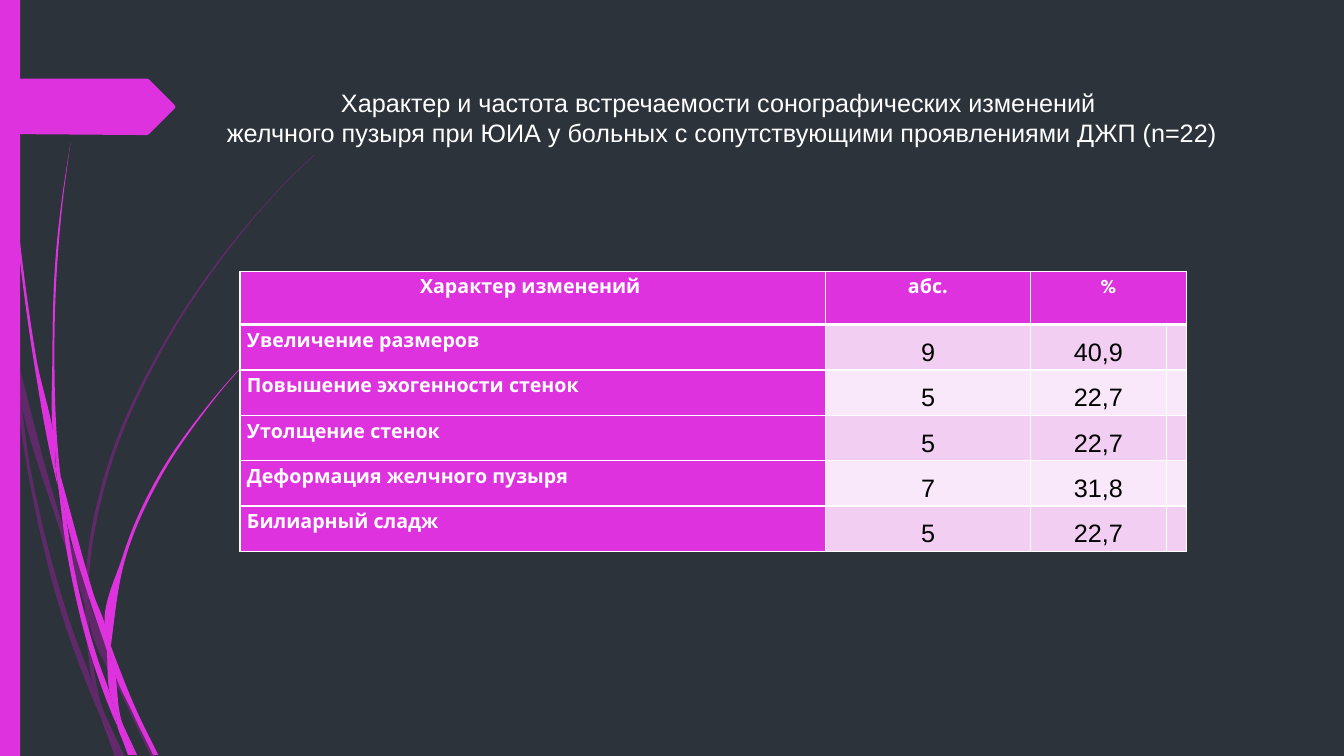
import math

from lxml import etree
from pptx import Presentation
from pptx import util as u
from pptx.dml import color
from pptx.enum import shapes, text
from pptx.oxml import ns

PX = u.Inches(1) / 100
MAGENTA, PURPLE, DARK, WHITE, BLACK = "DE32DE", "B01CB0", "2C333A", "FFFFFF", "000000"
BANDS = ("F2CEF2", "F9E8F9")

PURPLE_STRANDS = [
    [(11, 350), (9, 322), (0, 282), (0, 299), (10, 344)],
    [(58, 522), (84, 599), (85, 586), (62, 520), (14, 345), (17, 376)],
    [(92, 607), (88, 596), (88, 610), (123, 694), (150, 751), (155, 751), (127, 692)],
    [(119, 751), (124, 751), (105, 711)],
    [(93, 683), (70, 619), (31, 469), (17, 376), (11, 350), (28, 470), (65, 621), (92, 693),
     (101, 714), (99, 707)],
    [(84, 599), (87, 646), (93, 683), (96, 692), (105, 711), (103, 706), (91, 646), (88, 610),
     (88, 608)],
    [(88, 584), (110, 462), (160, 349), (229, 245), (268, 198), (290, 175), (312, 154),
     (312, 153), (289, 175), (268, 197), (228, 244), (158, 348), (107, 461), (85, 584),
     (85, 586), (88, 596)],
    [(101, 714), (114, 751), (119, 751)],
    [(88, 608), (88, 610), (88, 596), (85, 586), (84, 599)],
    [(96, 692), (93, 683), (99, 707), (101, 714), (119, 751), (105, 711)],
]
MAGENTA_STRANDS = [
    [(7, 110), (17, 233), (33, 355), (56, 477), (57, 481), (55, 457), (55, 453), (36, 355),
     (19, 232), (8, 109), (5, 48), (4, 0), (3, 0), (4, 48)],
    [(88, 592), (106, 645), (106, 633), (106, 631), (93, 590), (60, 472), (64, 505)],
    [(113, 649), (110, 641), (111, 656), (132, 708), (152, 749), (157, 749), (136, 706)],
    [(110, 691), (98, 657), (72, 556), (64, 505), (57, 477), (68, 557), (93, 659), (111, 708),
     (117, 722), (116, 717)],
    [(60, 472), (58, 453), (54, 349), (58, 245), (63, 193), (70, 141), (62, 193), (56, 245),
     (52, 349), (55, 449)],
    [(133, 749), (136, 749), (122, 719)],
    [(57, 477), (64, 505), (60, 472), (55, 449), (55, 453)],
    [(111, 633), (125, 552), (158, 476), (205, 406), (231, 374), (245, 359), (261, 344),
     (260, 344), (245, 358), (231, 373), (204, 405), (156, 474), (122, 551), (106, 631),
     (110, 641)],
    [(117, 722), (127, 749), (131, 749)],
    [(106, 645), (110, 691), (116, 706), (122, 719), (121, 716), (111, 656), (109, 651)],
    [(106, 645), (109, 651), (111, 656), (110, 641), (106, 631), (106, 633)],
    [(116, 706), (110, 691), (116, 717), (117, 722), (130, 749), (133, 749), (122, 719)],
]
BANNER = [(173, 108), (148, 133), (146, 134), (136, 134), (0, 133), (0, 78), (136, 78),
          (146, 78), (148, 79), (173, 104), (174, 106)]

TITLE = [
    "Характер и частота встречаемости сонографических изменений ",
    "желчного пузыря при ЮИА у больных с сопутствующими проявлениями ДЖП (n=22)",
]
HEADER = ["Характер изменений ", "абс.", "%", ""]
FINDINGS = [
    ["Увеличение размеров", "9", "40,9", ""],
    ["Повышение эхогенности стенок", "5", "22,7", ""],
    ["Утолщение стенок", "5", "22,7", ""],
    ["Деформация желчного пузыря", "7", "31,8", ""],
    ["Билиарный сладж", "5", "22,7", ""],
]


def px(value):
    return u.Emu(round(value * PX))


def rgb(value):
    return color.RGBColor.from_string(value)


def tangent(before, point, after, fallback):
    length_in, length_out = math.dist(before, point), math.dist(point, after)
    arrive = [(p - b) / length_in for b, p in zip(before, point)]
    leave = [(a - p) / length_out for p, a in zip(point, after)]
    if sum(a * b for a, b in zip(arrive, leave)) < 0.8:
        start, end = fallback
        return [(e - s) / math.dist(start, end) for s, e in zip(start, end)]
    mixed = [a / length_in + b / length_out for a, b in zip(arrive, leave)]
    return [m / math.hypot(*mixed) for m in mixed]


def smooth(shape):
    lines = list(shape._element.iter(ns.qn("a:lnTo")))
    points = [(int(line[0].get("x")), int(line[0].get("y"))) for line in lines]
    for i, line in enumerate(lines):
        before, start, end = points[i - 2], points[i - 1], points[i]
        after = points[(i + 1) % len(points)]
        reach = math.dist(start, end) / 3
        leave = tangent(before, start, end, (start, end))
        arrive = tangent(start, end, after, (start, end))
        handles = ([s + reach * d for s, d in zip(start, leave)],
                   [e - reach * d for e, d in zip(end, arrive)])
        line.tag = ns.qn("a:cubicBezTo")
        for position, (x, y) in enumerate(handles):
            line.insert(position, etree.Element(ns.qn("a:pt"), x=str(round(x)), y=str(round(y))))


class SlideBuilder:
    def __init__(self, slide):
        self.slide = slide
        self.body_font = "Arial"
        self.label_font = "League Spartan"

    def background(self, fill):
        self.slide.background.fill.solid()
        self.slide.background.fill.fore_color.rgb = rgb(fill)

    def paint(self, shape, fill, opacity=100):
        shape.shadow.inherit = False
        shape.line.fill.background()
        shape.fill.solid()
        shape.fill.fore_color.rgb = rgb(fill)
        if opacity < 100:
            tone = shape.fill._xPr.find(".//" + ns.qn("a:srgbClr"))
            etree.SubElement(tone, ns.qn("a:alpha")).set("val", str(opacity * 1000))

    def rectangle(self, left, top, width, height, fill):
        shape = self.slide.shapes.add_shape(
            shapes.MSO_SHAPE.RECTANGLE, px(left), px(top), px(width), px(height))
        self.paint(shape, fill)

    def outline(self, points, fill, opacity=100):
        corners = [(px(x), px(y)) for x, y in points]
        builder = self.slide.shapes.build_freeform(*corners[0], scale=1.0)
        builder.add_line_segments(corners[1:] + corners[:1], close=True)
        shape = builder.convert_to_shape()
        self.paint(shape, fill, opacity)
        return shape

    def format_paragraph(self, paragraph, font, size, fill, bold=False, centred=True):
        paragraph.alignment = text.PP_ALIGN.CENTER if centred else text.PP_ALIGN.LEFT
        for run in paragraph.runs:
            run.font.name = font
            run.font.size = u.Pt(size)
            run.font.bold = bold
            run.font.color.rgb = rgb(fill)

    def title(self, left, top, width, height, lines):
        box = self.slide.shapes.add_textbox(px(left), px(top), px(width), px(height))
        frame = box.text_frame
        frame.word_wrap = False
        frame.auto_size = text.MSO_AUTO_SIZE.SHAPE_TO_FIT_TEXT
        frame.vertical_anchor = text.MSO_ANCHOR.MIDDLE
        frame.text = "\n".join(lines)
        for paragraph in frame.paragraphs:
            self.format_paragraph(paragraph, self.body_font, 18, WHITE)

    def borders(self, cell, top, bottom):
        properties = cell._tc.get_or_add_tcPr()
        for side, width in (("L", 1), ("R", 1), ("T", top), ("B", bottom)):
            line = etree.SubElement(properties, ns.qn("a:ln" + side), w=str(u.Pt(width)))
            fill = etree.SubElement(line, ns.qn("a:solidFill"))
            etree.SubElement(fill, ns.qn("a:srgbClr"), val=WHITE)

    def cell(self, cell, value, row, column):
        header, label = row == 0, row == 0 or column == 0
        self.borders(cell, 3 if row == 1 else 1, 3 if header else 1)
        cell.fill.solid()
        cell.fill.fore_color.rgb = rgb(MAGENTA if label else BANDS[(row - 1) % 2])
        cell.margin_left = cell.margin_right = px(7)
        cell.margin_top = cell.margin_bottom = 0
        if not value:
            return
        cell.text_frame.text = value
        paragraph = cell.text_frame.paragraphs[0]
        paragraph.line_spacing = 1.5
        if header and column:
            paragraph.space_after = u.Pt(10)
        font = (self.label_font, 14, WHITE, True) if label else (self.body_font, 18, BLACK)
        self.format_paragraph(paragraph, *font, centred=header or column > 0)

    def table(self, left, top, widths, heights, rows):
        table = self.slide.shapes.add_table(
            len(heights), len(widths), px(left), px(top), px(sum(widths)), px(sum(heights))).table
        for column, width in zip(table.columns, widths):
            column.width = px(width)
        for i, (height, values) in enumerate(zip(heights, rows)):
            table.rows[i].height = px(height)
            for j, value in enumerate(values):
                self.cell(table.cell(i, j), value, i, j)
        table.cell(0, 2).merge(table.cell(0, 3))


def main():
    presentation = Presentation()
    presentation.slide_width, presentation.slide_height = px(1333), px(750)
    builder = SlideBuilder(presentation.slides.add_slide(presentation.slide_layouts[6]))
    builder.background(DARK)
    for strands, fill, opacity in ((PURPLE_STRANDS, PURPLE, 40), (MAGENTA_STRANDS, MAGENTA, 100)):
        for strand in strands:
            smooth(builder.outline(strand, fill, opacity))
    builder.rectangle(0, 0, 20, 750, MAGENTA)
    builder.outline(BANNER, MAGENTA)
    builder.table(238, 269, [581, 203, 135, 20], [53] + [45] * 5, [HEADER, *FINDINGS])
    builder.title(210, 81, 1012, 71, TITLE)
    presentation.save("out.pptx")


if __name__ == "__main__":
    main()
